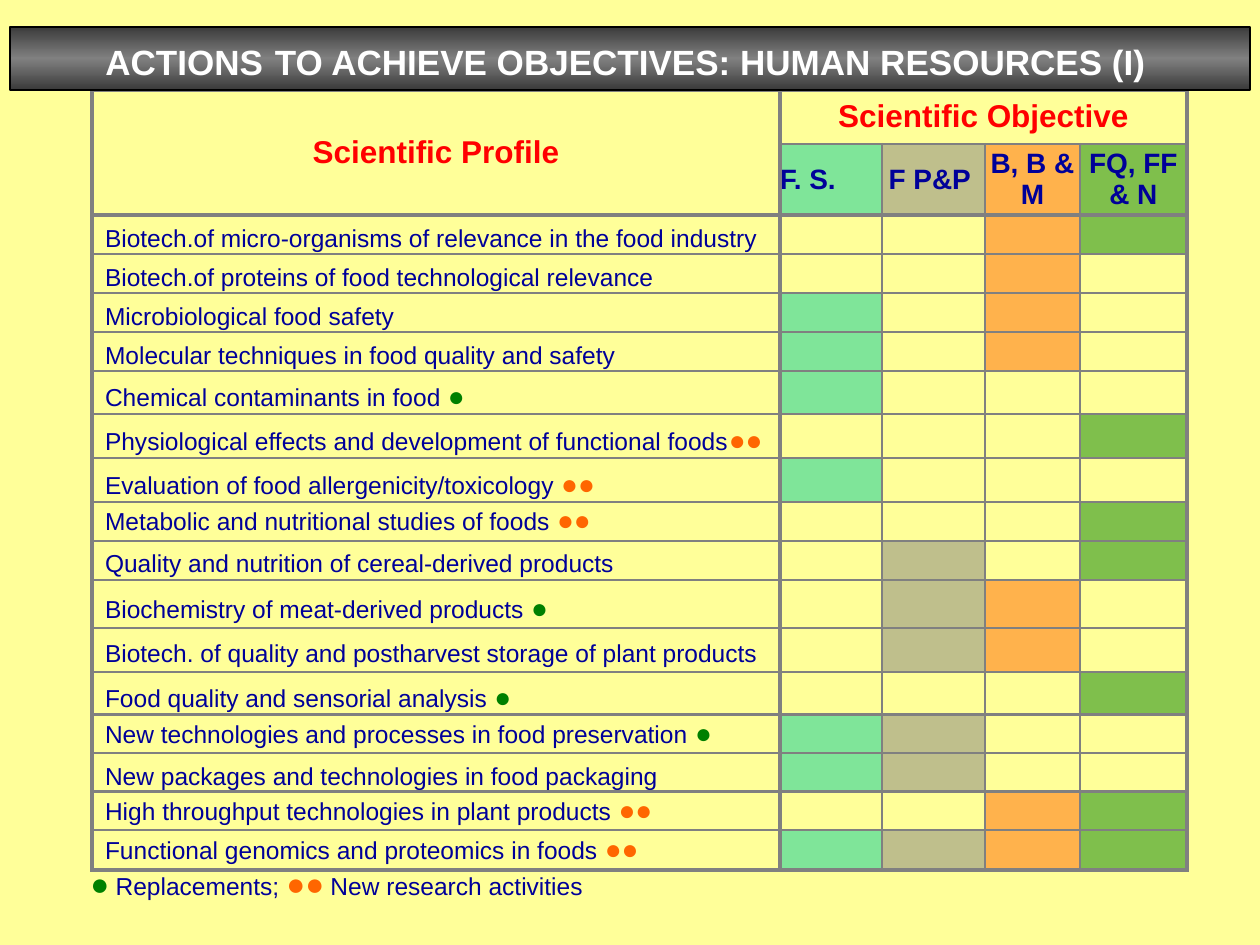
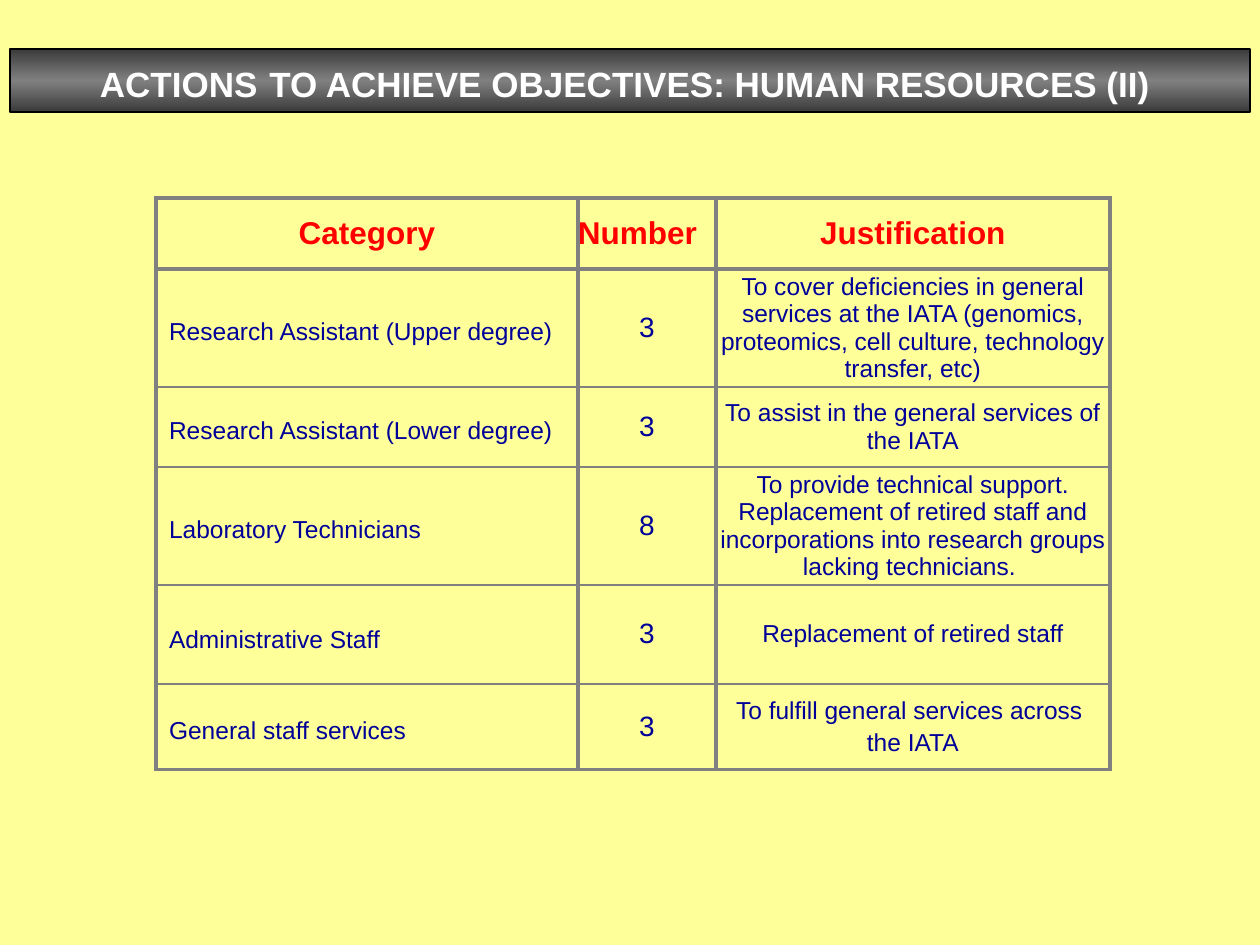
from lxml.etree import SubElement
from pptx import Presentation
from pptx.dml.color import RGBColor
from pptx.enum.shapes import MSO_SHAPE
from pptx.enum.text import MSO_ANCHOR, PP_ALIGN
from pptx.oxml.ns import qn
from pptx.util import Pt

PX = 7257
COLORS = {
    "paper": "FFFF99", "rule": "808080", "heading": "FF0000", "body": "000099",
    "title": "FFFFFF", "black": "000000", "band_edge": "3B3B3B", "band_middle": "808080",
    "replacement": "008000", "new_activity": "FF6600",
    "S": "00CC99", "P": "808080", "B": "FF6600", "F": "008000",
}
NO_GRID_STYLE = "{2D5ABB26-0587-4C30-8999-92F81FD0307C}"
THICK, MEDIUM, THIN = 2.25, 1.5, 1
LEFT, CENTER = PP_ALIGN.LEFT, PP_ALIGN.CENTER


def add_text(paragraph, runs, align=LEFT, bold=False, before=0, line_spacing=None, indent=0):
    paragraph.alignment = align
    if before:
        paragraph.space_before = Pt(before)
    if line_spacing:
        paragraph.line_spacing = line_spacing
    if indent:
        properties = paragraph._p.get_or_add_pPr()
        properties.set("marL", str(indent * PX))
        properties.set("indent", "0")
    for text, size, color, *font in runs:
        run = paragraph.add_run()
        run.text = text
        run.font.size = Pt(size)
        run.font.bold = bold
        run.font.name = font[0] if font else "Arial"
        run.font.color.rgb = RGBColor.from_string(COLORS[color])


def add_grid(slide, left, top, widths, heights, verticals, horizontals, merges=()):
    frame = slide.shapes.add_table(len(heights), len(widths), left * PX, top * PX,
                                   sum(widths) * PX, sum(heights) * PX)
    table = frame.table
    table._tbl.tblPr.find(qn("a:tableStyleId")).text = NO_GRID_STYLE
    table.first_row = table.horz_banding = False
    for column, width in zip(table.columns, widths):
        column.width = width * PX
    for row, height in zip(table.rows, heights):
        row.height = height * PX
    for first, last in merges:
        table.cell(*first).merge(table.cell(*last))
    for r in range(len(heights)):
        for c in range(len(widths)):
            cell = table.cell(r, c)
            cell.margin_left = cell.margin_right = cell.margin_top = cell.margin_bottom = 0
            cell.vertical_anchor = MSO_ANCHOR.MIDDLE
            if not cell.is_spanned:
                edges = {"L": verticals[c], "R": verticals[c + cell.span_width],
                         "T": horizontals[r], "B": horizontals[r + cell.span_height]}
                for side, weight in edges.items():
                    edge = SubElement(cell._tc.tcPr, qn(f"a:ln{side}"), w=str(Pt(weight)))
                    SubElement(SubElement(edge, qn("a:solidFill")), qn("a:srgbClr"),
                               val=COLORS["rule"])
            cell.fill.background()
    return table


prs = Presentation()
prs.slide_width, prs.slide_height = 1260 * PX, 945 * PX
paper = prs.slide_master.background.fill
paper.solid()
paper.fore_color.rgb = RGBColor.from_string(COLORS["paper"])
profiles_slide, staff_slide = [prs.slides.add_slide(prs.slide_layouts[6]) for _ in range(2)]

MARKS = {"replacement": "●", "new_activity": "●●"}
PROFILES = [
    ("Biotech.of micro-organisms of relevance in the food industry", None, "BF", 39),
    ("Biotech.of proteins of food technological relevance", None, "B", 39),
    ("Microbiological food safety", None, "SB", 39),
    ("Molecular techniques in food quality and safety", None, "SB", 39),
    ("Chemical contaminants in food ", "replacement", "S", 43),
    ("Physiological effects and development of functional foods", "new_activity", "F", 44),
    ("Evaluation of food allergenicity/toxicology ", "new_activity", "S", 44),
    ("Metabolic and nutritional studies of foods ", "new_activity", "F", 39),
    ("Quality and nutrition of cereal-derived products", None, "PF", 39),
    ("Biochemistry of meat-derived products ", "replacement", "PB", 48),
    ("Biotech. of quality and postharvest storage of plant products", None, "PB", 44),
    ("Food quality and sensorial analysis ", "replacement", "F", 43),
    ("New technologies and processes in food preservation ", "replacement", "SP", 36),
    ("New packages and technologies in food packaging", None, "SP", 38),
    ("High throughput technologies in plant products ", "new_activity", "BF", 35),
    ("Functional genomics and proteomics in foods ", "new_activity", "SPBF", 40),
]
SINGLE_SPACED = ("Metabolic", "New technologies", "High", "Functional")
OBJECTIVES = "SPBF"

profiles = add_grid(
    profiles_slide, 92, 90, [688, 102, 103, 95, 107],
    [54, 71] + [height for *_, height in PROFILES],
    [THICK, THICK, THIN, THIN, THIN, THICK],
    [THICK, MEDIUM, THICK] + [MEDIUM] * (len(PROFILES) - 1) + [THICK],
    merges=[((0, 0), (1, 0)), ((0, 1), (0, 4))])

for row, column, heading, size, color, align in [
    (0, 0, "Scientific Profile", 18, "heading", CENTER),
    (0, 1, "Scientific Objective", 18, "heading", CENTER),
    (1, 1, "F. S.", 16, "body", LEFT),
    (1, 2, "F P&P ", 16, "body", CENTER),
    (1, 3, "B, B & M", 16, "body", CENTER),
    (1, 4, "FQ, FF & N", 16, "body", CENTER),
]:
    add_text(profiles.cell(row, column).text_frame.paragraphs[0], [(heading, size, color)],
             align, bold=True, before=size / 5)

for row, (profile, status, _, _) in enumerate(PROFILES, 2):
    runs = [(profile, 14, "body")]
    if status:
        runs.append((MARKS[status], 16, status))
    single = profile.startswith(SINGLE_SPACED)
    add_text(profiles.cell(row, 0).text_frame.paragraphs[0], runs, indent=13,
             before=3 if single else 0, line_spacing=None if single else 1.3)

for row, covered in enumerate([OBJECTIVES] + [codes for _, _, codes, _ in PROFILES], 1):
    for objective in covered:
        cell = profiles.cell(row, 1 + OBJECTIVES.index(objective))
        cell.fill.solid()
        cell.fill.fore_color.rgb = RGBColor.from_string(COLORS[objective])
        tint = cell._tc.tcPr.find(qn("a:solidFill"))[0]
        SubElement(tint, qn("a:alpha"), val="50000")

legend = profiles_slide.shapes.add_textbox(78 * PX, 858 * PX, 602 * PX, 50 * PX).text_frame
legend.word_wrap = True
add_text(legend.paragraphs[0], [
    (MARKS["replacement"], 18, "replacement", "Times New Roman"),
    (" ", 14, "black", "Times New Roman"),
    ("Replacements; ", 14, "body"),
    (MARKS["new_activity"], 18, "new_activity"),
    (" ", 14, "new_activity", "Times New Roman"),
    ("New research activities", 14, "body"),
])

STAFF = [
    ("Research Assistant (Upper degree)", "3",
     ["To cover deficiencies in general services at the IATA (genomics, proteomics, "
      "cell culture, technology transfer, etc)"]),
    ("Research Assistant (Lower degree)", "3",
     ["To assist in the general services of the IATA"]),
    ("Laboratory Technicians", "8",
     ["To provide technical support. Replacement of retired staff and incorporations "
      "into research groups lacking technicians. "]),
    ("Administrative Staff", "3", ["Replacement of retired staff"]),
    ("General staff services", "3", ["To fulfill general services across ", "the IATA"]),
]
staff = add_grid(staff_slide, 156, 198, [422, 138, 394], [71, 118, 80, 118, 99, 86],
                 [THICK] * 4, [THICK, THICK] + [MEDIUM] * 4 + [THICK])

for column, (heading, align) in enumerate(
        [("Category", CENTER), ("Number", LEFT), ("Justification", CENTER)]):
    add_text(staff.cell(0, column).text_frame.paragraphs[0], [(heading, 18, "heading")],
             align, bold=True, before=3.6)

for row, (category, number, justification) in enumerate(STAFF, 1):
    category_runs = [(category, 14, "body")]
    if category == "Administrative Staff":
        category_runs.append((" ", 16, "body"))
    add_text(staff.cell(row, 0).text_frame.paragraphs[0], category_runs,
             line_spacing=1.3, indent=13)
    add_text(staff.cell(row, 1).text_frame.paragraphs[0], [(number, 16, "body")],
             CENTER, before=3.2)
    reasons = staff.cell(row, 2).text_frame
    for index, reason in enumerate(justification):
        paragraph = reasons.add_paragraph() if index else reasons.paragraphs[0]
        add_text(paragraph, [(reason, 14, "body")], CENTER, before=2.8)

for slide, top, left, width, part in [(profiles_slide, 27, 92, 1067, "I"),
                                      (staff_slide, 49, 87, 1076, "II")]:
    banner = slide.shapes.add_group_shape().shapes
    band = banner.add_shape(MSO_SHAPE.RECTANGLE, 10 * PX, top * PX, 1240 * PX, 63 * PX)
    band.shadow.inherit = False
    band.line.color.rgb = RGBColor.from_string(COLORS["black"])
    band.line.width = Pt(0.75)
    band.fill.gradient()
    band.fill.gradient_angle = 270
    stops = band._element.spPr.find(qn("a:gradFill")).find(qn("a:gsLst"))
    stops.clear()
    for position, shade in [(0, "band_edge"), (50000, "band_middle"), (100000, "band_edge")]:
        stop = SubElement(stops, qn("a:gs"), pos=str(position))
        SubElement(stop, qn("a:srgbClr"), val=COLORS[shade])
    title = banner.add_textbox(left * PX, top * PX, width * PX, 63 * PX).text_frame
    title.word_wrap = False
    add_text(title.paragraphs[0], [
        ("ACTIONS", 20, "title"),
        (" ", 24, "title"),
        (f"TO ACHIEVE OBJECTIVES: HUMAN RESOURCES ({part})", 20, "title"),
    ], CENTER, bold=True)

prs.save("out.pptx")
